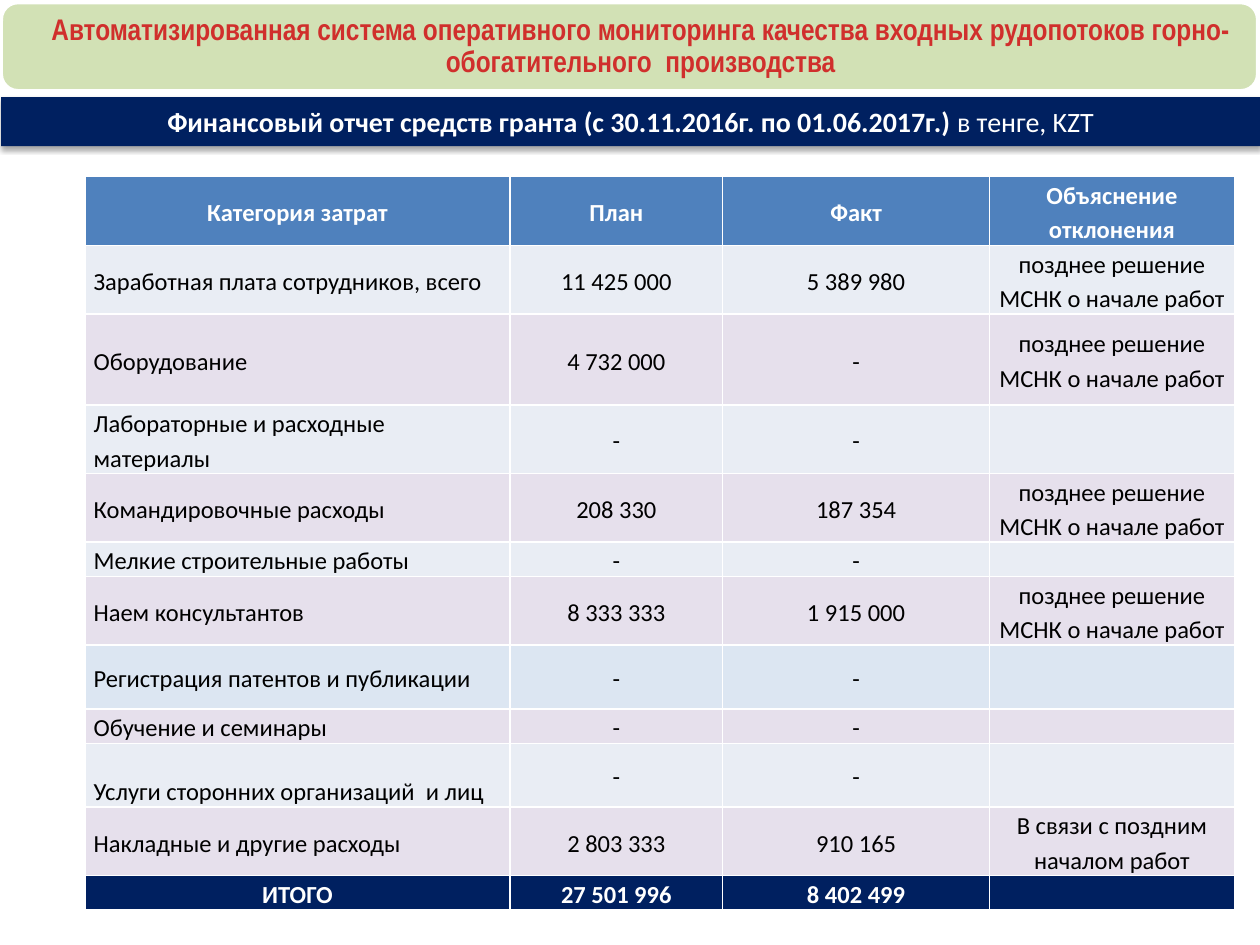
"""Build the grant finance report slide."""
from typing import NamedTuple

from lxml import etree
from pptx import Presentation
from pptx.dml.color import RGBColor
from pptx.enum.shapes import MSO_SHAPE
from pptx.enum.text import MSO_ANCHOR, PP_ALIGN
from pptx.oxml.ns import qn
from pptx.util import Pt

ROUND_RECT = MSO_SHAPE.ROUNDED_RECTANGLE
MIDDLE, BOTTOM = MSO_ANCHOR.MIDDLE, MSO_ANCHOR.BOTTOM
CENTER, LEFT = PP_ALIGN.CENTER, PP_ALIGN.LEFT

WHITE, BLACK, RED = "FFFFFF", "000000", "D02F2C"
NAVY, BLUE, GREEN = "002060", "4F81BD", "D2E1B5"
GREY, LILAC, SKY = "E9EDF4", "E6E0EC", "DCE6F2"
CELL_SIZE = 14
LATE = "позднее решение МСНК о начале работ"


class Run(NamedTuple):
    """A piece of text with its format."""
    text: str
    size: float
    color: str
    bold: bool = False
    font: str = "Calibri"


class Bar(NamedTuple):
    """A rounded bar across the top of the slide."""
    left: float
    top: float
    width: float
    height: float
    corner: float
    fill: str
    margins: tuple
    spacing: float
    runs: tuple


class Row(NamedTuple):
    """A table row: four texts, height, fill and label anchor."""
    texts: tuple
    height: float
    fill: str
    anchor: MSO_ANCHOR = MIDDLE


BARS = (
    Bar(0.7, 55.5, 719.3, 28, 0, NAVY, (7.2, 3.6, 7.2, 3.6), 1,
        (Run("Финансовый отчет средств гранта (с 30.11.2016г. по 01.06.2017г.) ",
             16, WHITE, True),
         Run("в тенге, KZT", 16, WHITE))),
    Bar(0.7, 1.5, 718, 50.4, 0.19, GREEN, (20, 7.2, 7.2, 7.2), 0.9,
        (Run("Автоматизированная система оперативного мониторинга качества "
             "входных рудопотоков горно-обогатительного  производства",
             17, RED, True, "Arial Narrow"),)),
)
COLUMNS = (243, 121.5, 152.5, 140)
ROWS = (
    Row(("Категория затрат", "План", "Факт", "Объяснение отклонения"), 39, BLUE),
    Row(("Заработная плата сотрудников, всего", "11 425 000", "5 389 980", LATE), 39, GREY),
    Row(("Оборудование", "4 732 000", "-", LATE), 52, LILAC),
    Row(("Лабораторные и расходные материалы", "-", "-", ""), 39, GREY, BOTTOM),
    Row(("Командировочные расходы", "208 330", "187 354", LATE), 39, LILAC),
    Row(("Мелкие строительные работы", "-", "-", ""), 19.5, GREY, BOTTOM),
    Row(("Наем консультантов", "8 333 333", "1 915 000", LATE), 39, LILAC),
    Row(("Регистрация патентов и публикации", "-", "-", ""), 36.5, SKY),
    Row(("Обучение и семинары", "-", "-", ""), 19.5, LILAC, BOTTOM),
    Row(("Услуги сторонних организаций  и лиц", "-", "-", ""), 36.5, GREY, BOTTOM),
    Row(("Накладные и другие расходы", "2 803 333", "910 165",
         "В связи с поздним началом работ"), 39, LILAC),
    Row(("ИТОГО", "27 501 996", "8 402 499", ""), 19.5, NAVY),
)


def rgb(value: str) -> RGBColor:
    """Turn a hex string into a colour."""
    return RGBColor.from_string(value)


def apply(target, **values) -> None:
    """Set attributes from format values."""
    for name, value in values.items():
        setattr(target, name, value)


def paint(target, color: str) -> None:
    """Give a shape or cell a solid fill."""
    target.fill.solid()
    target.fill.fore_color.rgb = rgb(color)


def margins(target, values: tuple) -> None:
    """Set left, top, right and bottom insets."""
    for side, value in zip(("left", "top", "right", "bottom"), values):
        setattr(target, f"margin_{side}", Pt(value))


def write(p, runs: tuple, align: PP_ALIGN, spacing: float) -> None:
    """Fill a paragraph with formatted runs."""
    apply(p, alignment=align, line_spacing=spacing)
    for run in runs:
        r = p.add_run()
        r.text = run.text
        apply(r.font, size=Pt(run.size), bold=run.bold, name=run.font)
        r.font.color.rgb = rgb(run.color)


def add_shadow(sp) -> None:
    """Put a soft shadow below a shape."""
    effects = sp._element.spPr.find(qn("a:effectLst"))
    shadow = etree.SubElement(effects, qn("a:outerShdw"), blurRad=str(Pt(3.1)),
                              dist=str(Pt(1.8)), dir="5400000", rotWithShape="0")
    color = etree.SubElement(shadow, qn("a:srgbClr"), val=BLACK)
    etree.SubElement(color, qn("a:alpha"), val="35000")


def add_bar(s, bar: Bar):
    """Draw a bar with centred text."""
    sp = s.shapes.add_shape(ROUND_RECT, Pt(bar.left), Pt(bar.top),
                            Pt(bar.width), Pt(bar.height))
    sp.adjustments[0] = bar.corner
    sp.shadow.inherit = False
    paint(sp, bar.fill)
    tf = sp.text_frame
    apply(tf, word_wrap=True, vertical_anchor=MIDDLE)
    margins(tf, bar.margins)
    write(tf.paragraphs[0], bar.runs, CENTER, bar.spacing)
    return sp


def add_borders(cell) -> None:
    """Draw thin white lines round a cell."""
    tc_pr = cell._tc.get_or_add_tcPr()
    for side in ("lnL", "lnR", "lnT", "lnB"):
        ln = etree.SubElement(tc_pr, qn(f"a:{side}"), w=str(Pt(1)))
        fill = etree.SubElement(ln, qn("a:solidFill"))
        etree.SubElement(fill, qn("a:srgbClr"), val=WHITE)


def fill_cell(cell, text: str, row: Row, is_label: bool) -> None:
    """Format one table cell and write its text."""
    strong = row.fill in (BLUE, NAVY)
    add_borders(cell)
    paint(cell, row.fill)
    margins(cell, (5, 0, 5, 0))
    cell.vertical_anchor = row.anchor if is_label else MIDDLE
    p = cell.text_frame.paragraphs[0]
    runs = (Run(text, CELL_SIZE, WHITE if strong else BLACK, strong),) if text else ()
    write(p, runs, LEFT if is_label and not strong else CENTER, 1.15)
    if not text:
        etree.SubElement(p._p, qn("a:endParaRPr"), sz=str(CELL_SIZE * 100))


def add_costs(s) -> None:
    """Draw the table of costs."""
    table = s.shapes.add_table(len(ROWS), len(COLUMNS), Pt(48.5), Pt(101), Pt(sum(COLUMNS)),
                               Pt(sum(row.height for row in ROWS))).table
    apply(table, first_row=False, horz_banding=False)
    for column, width in zip(table.columns, COLUMNS):
        column.width = Pt(width)
    for line, row in zip(table.rows, ROWS):
        line.height = Pt(row.height)
        for i, (cell, text) in enumerate(zip(line.cells, row.texts)):
            fill_cell(cell, text, row, i == 0)


def main() -> None:
    """Build and save the slide."""
    prs = Presentation()
    apply(prs, slide_width=Pt(720), slide_height=Pt(540))
    s = prs.slides.add_slide(prs.slide_layouts[6])
    add_costs(s)
    subtitle, title = [add_bar(s, bar) for bar in BARS]
    subtitle.line.fill.background()
    add_shadow(subtitle)
    title.line.color.rgb = rgb(WHITE)
    title.line.width = Pt(2)
    prs.save("out.pptx")


if __name__ == "__main__":
    main()
